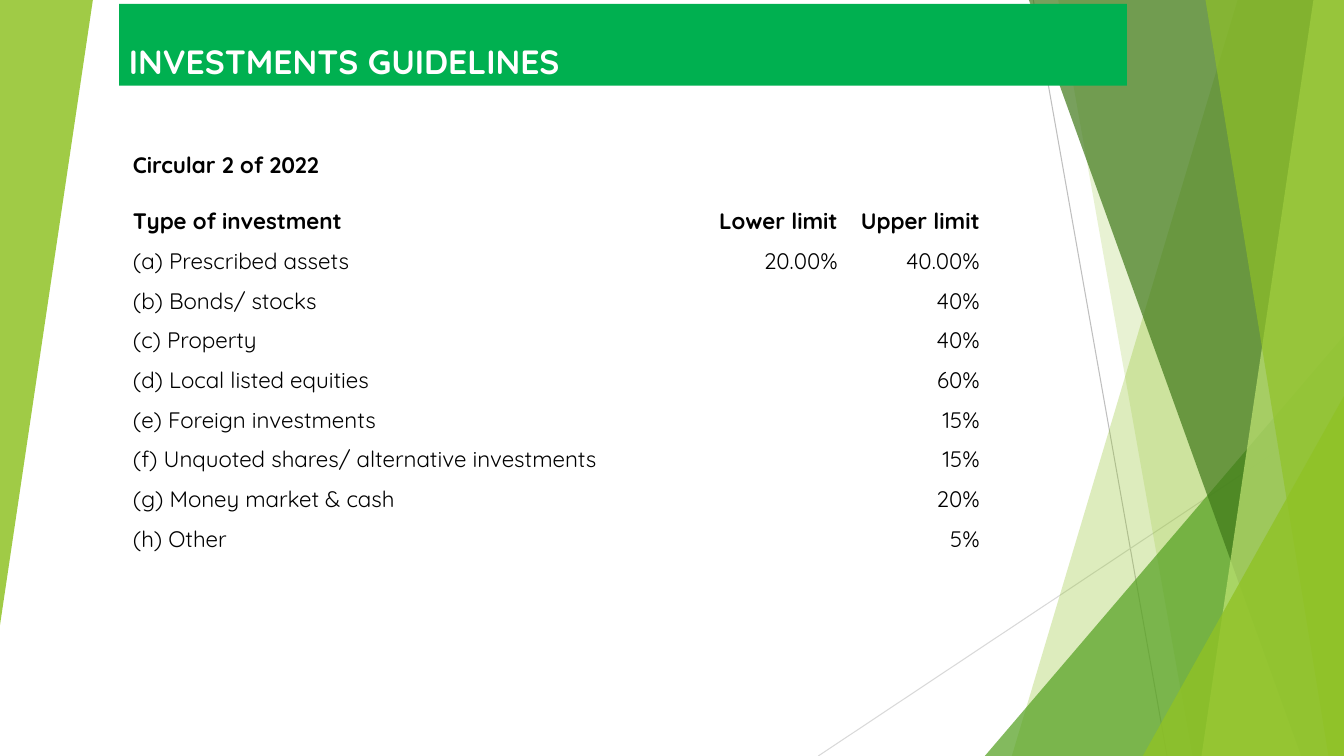
from lxml import etree
from pptx import Presentation
from pptx import util as u
from pptx.dml.color import RGBColor
from pptx.enum import shapes, text
from pptx.oxml.ns import qn

WIDTH, HEIGHT = 33.87, 19.05
FONT = "Quicksand"
LIGHT_GREEN = "90C226"
LIMITS = [
    ("(a) Prescribed assets", "20.00%", "40.00%"),
    ("(b) Bonds/ stocks", "", "40%"),
    ("(c) Property", "", "40%"),
    ("(d) Local listed equities", "", "60%"),
    ("(e) Foreign investments", "", "15%"),
    ("(f) Unquoted shares/ alternative investments", "", "15%"),
    ("(g) Money market & cash", "", "20%"),
    ("(h) Other", "", "5%"),
]


def color(hex_value):
    return RGBColor.from_string(hex_value)


def paint(shape, hex_value, opacity=100):
    """Fill the shape without outline or shadow; opacity is in percent."""
    shape.shadow.inherit = False
    shape.line.fill.background()
    shape.fill.solid()
    shape.fill.fore_color.rgb = color(hex_value)
    if opacity < 100:
        rgb = shape.fill._xPr.find(".//" + qn("a:srgbClr"))
        etree.SubElement(rgb, qn("a:alpha")).set("val", str(opacity * 1000))


def add_thin_line(slide, start, end, hex_value):
    points = [u.Cm(value) for value in (*start, *end)]
    line = slide.shapes.add_connector(shapes.MSO_CONNECTOR.STRAIGHT, *points)
    line.line.color.rgb = color(hex_value)
    line.line.width = u.Pt(0.75)
    etree.SubElement(line._element.spPr, qn("a:effectLst"))


def add_band(slide, top_x, bottom_x, hex_value, opacity):
    """Fill the area between a slanted left edge and the slide's right edge."""
    builder = slide.shapes.build_freeform(u.Cm(top_x), 0)
    corners = [(WIDTH, 0), (WIDTH, HEIGHT), (bottom_x, HEIGHT)]
    builder.add_line_segments([(u.Cm(x), u.Cm(y)) for x, y in corners])
    paint(builder.convert_to_shape(), hex_value, opacity)


def add_triangle(slide, left, top, width, height, hex_value, opacity, rotation=0):
    """Draw a right triangle with its apex above the right corner."""
    box = [u.Cm(value) for value in (left, top, width, height)]
    triangle = slide.shapes.add_shape(shapes.MSO_SHAPE.ISOSCELES_TRIANGLE, *box)
    triangle.adjustments[0] = 1
    triangle.rotation = rotation
    paint(triangle, hex_value, opacity)


def add_run(paragraph, content, size, hex_value, bold):
    run = paragraph.add_run()
    run.text = content
    run.font.name = FONT
    run.font.size = u.Pt(size)
    run.font.bold = bold
    run.font.color.rgb = color(hex_value)


def add_title(slide, content):
    box = [u.Cm(value) for value in (3, 0.1, 25.4, 2.06)]
    title = slide.shapes.add_shape(shapes.MSO_SHAPE.RECTANGLE, *box)
    paint(title, "00B050")
    title.text_frame.vertical_anchor = text.MSO_ANCHOR.BOTTOM
    paragraph = title.text_frame.paragraphs[0]
    paragraph.alignment = text.PP_ALIGN.LEFT
    add_run(paragraph, content, 24, "FFFFFF", True)


def fill_cell(cell, lines, alignment, bold):
    cell.fill.background()
    cell.vertical_anchor = text.MSO_ANCHOR.BOTTOM
    cell.margin_left = cell.margin_right = u.Cm(0.1)
    cell.margin_top, cell.margin_bottom = u.Cm(0.03), 0
    frame = cell.text_frame
    for index, line in enumerate(lines):
        paragraph = frame.add_paragraph() if index else frame.paragraphs[0]
        paragraph.alignment = alignment
        if index:
            paragraph.space_before = u.Pt(20)
        if line:
            add_run(paragraph, line, 16, "000000", bold)


def add_limits_table(slide):
    header = ("Circular 2 of 2022\nType of investment", "Lower limit", "Upper limit")
    rows = [header, *LIMITS]
    widths, heights = [14.38, 3.58, 3.58], [2.83] + [1] * len(LIMITS)
    box = [u.Cm(value) for value in (3.25, 3.1, sum(widths), sum(heights))]
    table = slide.shapes.add_table(len(rows), len(widths), *box).table
    table.first_row = table.horz_banding = False
    for column, width in zip(table.columns, widths):
        column.width = u.Cm(width)
    for row_index, values in enumerate(rows):
        table.rows[row_index].height = u.Cm(heights[row_index])
        for column_index, value in enumerate(values):
            alignment = text.PP_ALIGN.RIGHT if column_index else text.PP_ALIGN.LEFT
            cell = table.cell(row_index, column_index)
            fill_cell(cell, value.split("\n"), alignment, row_index == 0)


def add_backdrop(slide):
    add_thin_line(slide, (26.04, 0), (29.41, HEIGHT), "BFBFBF")
    add_thin_line(slide, (WIDTH, 10.24), (20.62, HEIGHT), "D9D9D9")
    add_band(slide, 31.19, 25.5, LIGHT_GREEN, 30)
    add_band(slide, 26.67, 30.05, LIGHT_GREEN, 20)
    add_triangle(slide, 24.82, 8.46, WIDTH - 24.82, HEIGHT - 8.46, "54A021", 72)
    add_band(slide, 25.93, 32.79, "3F7819", 70)
    add_band(slide, 33.1, 30.28, "C0E474", 70)
    add_band(slide, 30.38, 33.48, LIGHT_GREEN, 65)
    add_triangle(slide, 28.8, 9.98, WIDTH - 28.8, HEIGHT - 9.98, LIGHT_GREEN, 80)
    add_triangle(slide, 0, 0, 2.34, 15.75, LIGHT_GREEN, 85, rotation=180)


def main():
    presentation = Presentation()
    presentation.slide_width = u.Cm(WIDTH)
    presentation.slide_height = u.Cm(HEIGHT)
    slide = presentation.slides.add_slide(presentation.slide_layouts[6])
    add_backdrop(slide)
    add_title(slide, "INVESTMENTS GUIDELINES")
    add_limits_table(slide)
    presentation.save("out.pptx")


if __name__ == "__main__":
    main()
